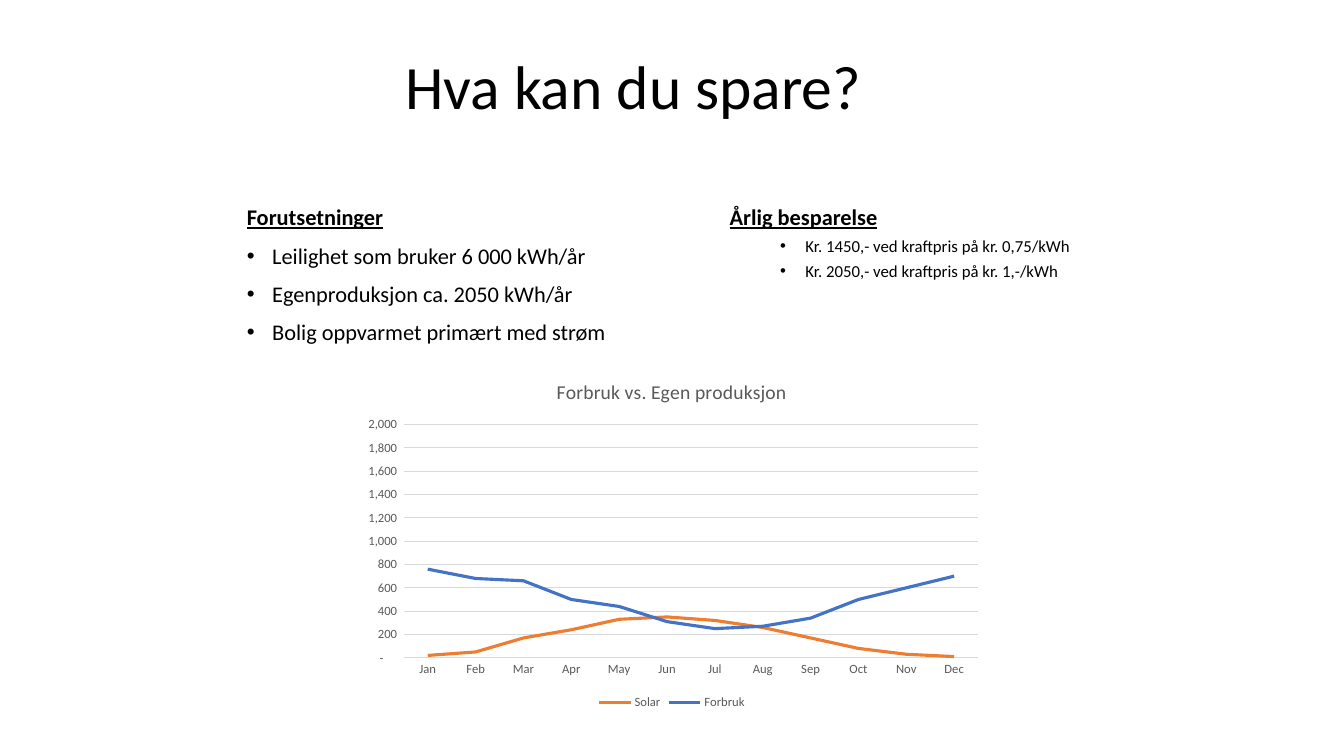
from dataclasses import dataclass

from lxml import etree
from pptx import Presentation
from pptx.chart.data import CategoryChartData
from pptx.dml.color import RGBColor
from pptx.enum import chart as ch, text as tx
from pptx.oxml.ns import qn
from pptx.util import Cm, Pt

FONT = "Calibri"
BLACK, GREY, GRID = "000000", "595959", "D9D9D9"


@dataclass
class Column:
    left: float
    heading: str
    points: list[str]
    size: int
    indent: float
    level: int
    space: int


@dataclass
class Series:
    name: str
    color: str
    values: list[int]


COLUMNS = [
    Column(5.97, "Forutsetninger",
           ["Leilighet som bruker 6 000 kWh/år",
            "Egenproduksjon ca. 2050 kWh/år",
            "Bolig oppvarmet primært med strøm"], 16, 0.64, 0, 10),
    Column(18.14, "Årlig besparelse",
           ["Kr. 1450,- ved kraftpris på kr. 0,75/kWh",
            "Kr. 2050,- ved kraftpris på kr. 1,-/kWh"], 12, 1.91, 1, 5),
]
MONTHS = "Jan Feb Mar Apr May Jun Jul Aug Sep Oct Nov Dec".split()
SERIES = [
    Series("Solar", "ED7D31",
           [20, 50, 170, 240, 330, 350, 320, 260, 170, 80, 30, 10]),
    Series("Forbruk", "4472C4",
           [760, 680, 660, 500, 440, 310, 250, 270, 340, 500, 600, 700]),
]


def rgb(value: str) -> RGBColor:
    return RGBColor.from_string(value)


def style_font(font, size: float, color: str) -> None:
    font.name, font.size = FONT, Pt(size)
    font.color.rgb = rgb(color)


def style_line(line, color: str, width: float) -> None:
    line.color.rgb = rgb(color)
    line.width = Pt(width)


def add_bullet(paragraph, indent: float) -> None:
    properties = paragraph._p.get_or_add_pPr()
    properties.set("marL", str(Cm(indent)))
    properties.set("indent", str(-Cm(0.64)))
    etree.SubElement(properties, qn("a:buFont"), typeface="Arial")
    etree.SubElement(properties, qn("a:buChar"), char="•")


def add_title(slide, wording: str) -> None:
    title = slide.shapes.title
    title.left, title.top = Cm(9.96), Cm(0.41)
    title.width, title.height = Cm(13.94), Cm(3.68)
    title.text_frame.text = wording
    title.text_frame.vertical_anchor = tx.MSO_ANCHOR.MIDDLE
    paragraph = title.text_frame.paragraphs[0]
    paragraph.alignment = tx.PP_ALIGN.LEFT
    paragraph.line_spacing = 0.9
    style_font(paragraph.font, 44, BLACK)


def add_column(slide, column: Column) -> None:
    frame = slide.shapes.add_textbox(
        Cm(column.left), Cm(5.08), Cm(9.75), Cm(4.42)).text_frame
    frame.word_wrap = True
    heading = frame.paragraphs[0]
    heading.text = column.heading
    heading.line_spacing = 0.9
    style_font(heading.font, 16, BLACK)
    heading.font.bold = heading.font.underline = True
    for point in column.points:
        paragraph = frame.add_paragraph()
        paragraph.text = point
        paragraph.level = column.level
        add_bullet(paragraph, column.indent)
        paragraph.line_spacing = 0.9
        paragraph.space_before = Pt(column.space)
        style_font(paragraph.font, column.size, BLACK)


def add_usage_chart(slide) -> None:
    data = CategoryChartData()
    data.categories = MONTHS
    for series in SERIES:
        data.add_series(series.name, series.values)
    chart = slide.shapes.add_chart(
        ch.XL_CHART_TYPE.LINE, Cm(8.89), Cm(9.12), Cm(16.08), Cm(8.86),
        data).chart
    style_font(chart.font, 10, BLACK)

    chart.has_title = True
    heading = chart.chart_title.text_frame
    heading.text = "Forbruk vs. Egen produksjon"
    style_font(heading.paragraphs[0].font, 14, GREY)
    heading.paragraphs[0].font.bold = False
    chart.chart_title.include_in_layout = False

    chart.has_legend = True
    chart.legend.position = ch.XL_LEGEND_POSITION.BOTTOM
    chart.legend.include_in_layout = False
    style_font(chart.legend.font, 9, GREY)

    months, usage = chart.category_axis, chart.value_axis
    for axis in (months, usage):
        axis.major_tick_mark = axis.minor_tick_mark = ch.XL_TICK_MARK.NONE
        style_font(axis.tick_labels.font, 9, GREY)
    style_line(months.format.line, GRID, 0.75)
    usage.format.line.fill.background()
    style_line(usage.major_gridlines.format.line, GRID, 0.75)
    usage.minimum_scale, usage.maximum_scale = 0, 2000
    usage.major_unit = 200
    usage.tick_labels.number_format = r'_-* #,##0_-;\-* #,##0_-;_-* "-"??_-;_-@_'
    usage.tick_labels.number_format_is_linked = False

    plot = chart.plots[0]
    plot.vary_by_categories = False
    for drawn, series in zip(plot.series, SERIES):
        drawn.smooth = False
        drawn.marker.style = ch.XL_MARKER_STYLE.NONE
        style_line(drawn.format.line, series.color, 2.25)


def main() -> None:
    deck = Presentation()
    deck.slide_width, deck.slide_height = Cm(33.87), Cm(19.05)
    slide = deck.slides.add_slide(deck.slide_layouts[5])
    add_title(slide, "Hva kan du spare?")
    for column in COLUMNS:
        add_column(slide, column)
    add_usage_chart(slide)
    deck.save("out.pptx")


if __name__ == "__main__":
    main()
